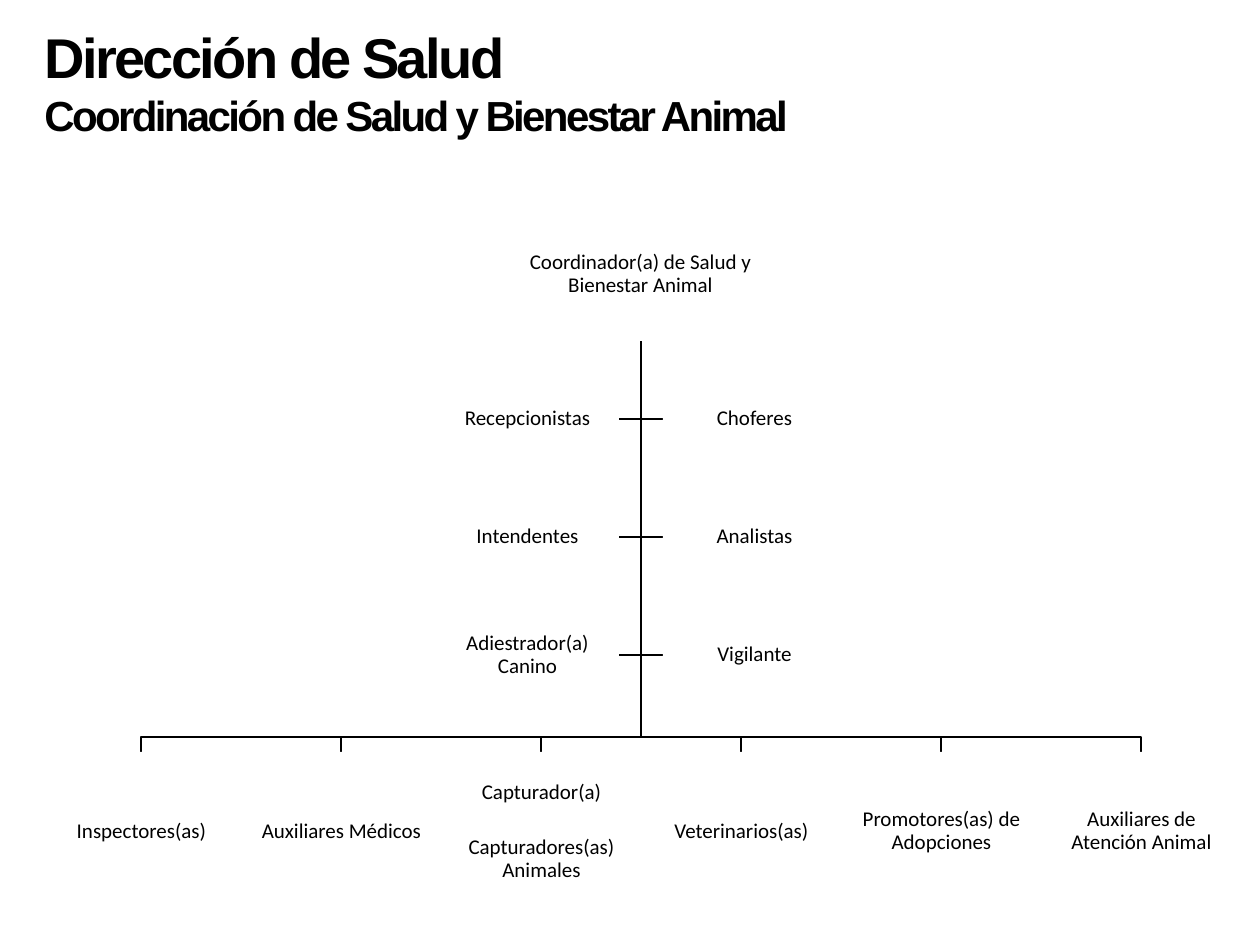
import pptx
import pptx.dml.color
import pptx.enum.shapes
import pptx.enum.text
import pptx.util
from dataclasses import dataclass

PX = 914400 / 126
TRUNK_X = 641
ROOT_BOTTOM = 341
BUS_Y = 737


@dataclass(frozen=True)
class Theme:
    ink: str = "000000"
    paper: str = "FFFFFF"
    title_font: str = "Arial"
    body_font: str = "Calibri"
    title_size: int = 32
    subtitle_size: int = 24
    body_size: int = 12
    line_width: int = 1


THEME = Theme()

STAFF_ROWS = [
    ("Recepcionistas", "Choferes"),
    ("Intendentes", "Analistas"),
    ("Adiestrador(a) Canino", "Vigilante"),
]
TEAMS = [
    ["Inspectores(as)"],
    ["Auxiliares Médicos"],
    ["Capturador(a)", "Capturadores(as) Animales"],
    ["Veterinarios(as)"],
    ["Promotores(as) de Adopciones"],
    ["Auxiliares de Atención Animal"],
]


def emu(*lengths):
    return [round(v * PX) for v in lengths]


def rgb(value):
    return pptx.dml.color.RGBColor.from_string(value)


def apply(target, formats):
    for name, value in formats.items():
        setattr(target, name, value)


def add_run(p, text, font, size, bold=False):
    r = p.add_run()
    r.text = text
    apply(r.font, {"name": font, "size": pptx.util.Pt(size), "bold": bold})
    r.font.color.rgb = rgb(THEME.ink)
    return r


def add_title(s, lines):
    sp = s.shapes.add_textbox(*emu(32, 16, 955, 131))
    tf = sp.text_frame
    apply(tf, {
        "word_wrap": True,
        "auto_size": pptx.enum.text.MSO_AUTO_SIZE.SHAPE_TO_FIT_TEXT,
    })
    for i, (text, size) in enumerate(lines):
        p = tf.paragraphs[0] if i == 0 else tf.add_paragraph()
        r = add_run(p, text, THEME.title_font, size, True)
        r._r.get_or_add_rPr().set("spc", "-150")


def add_role(group, box, lines):
    sp = group.shapes.add_shape(
        pptx.enum.shapes.MSO_SHAPE.RECTANGLE, *emu(*box))
    sp.shadow.inherit = False
    sp.fill.solid()
    sp.fill.fore_color.rgb = rgb(THEME.paper)
    sp.line.fill.background()
    tf = sp.text_frame
    margin = emu(1)[0]
    apply(tf, {
        "word_wrap": True,
        "vertical_anchor": pptx.enum.text.MSO_ANCHOR.MIDDLE,
        "margin_left": margin,
        "margin_right": margin,
        "margin_top": margin,
        "margin_bottom": margin,
    })
    for i, text in enumerate(lines):
        p = tf.paragraphs[0] if i == 0 else tf.add_paragraph()
        apply(p, {
            "alignment": pptx.enum.text.PP_ALIGN.CENTER,
            "line_spacing": 0.9,
            "space_after": pptx.util.Pt(19 if i < len(lines) - 1 else 0),
        })
        add_run(p, text, THEME.body_font, THEME.body_size)


def add_branch(group, *points):
    builder = group.shapes.build_freeform(TRUNK_X, ROOT_BOTTOM, scale=PX)
    builder.add_line_segments(points, close=False)
    sp = builder.convert_to_shape()
    sp.shadow.inherit = False
    sp.fill.background()
    sp.line.color.rgb = rgb(THEME.ink)
    sp.line.width = pptx.util.Pt(THEME.line_width)


def add_chart_of_roles(s):
    group = s.shapes.add_group_shape()
    tick, staff_w, staff_h = 22, 183, 94
    team_w, team_h, team_top = 169, 159, 752
    staff_mids = [419 + 118 * i for i in range(len(STAFF_ROWS))]
    team_mids = [TRUNK_X + 200 * i - 100 * (len(TEAMS) - 1)
                 for i in range(len(TEAMS))]

    for y in staff_mids:
        for x in (TRUNK_X - tick, TRUNK_X + tick):
            add_branch(group, (TRUNK_X, y), (x, y))
    for x in team_mids:
        add_branch(group, (TRUNK_X, BUS_Y), (x, BUS_Y), (x, team_top))

    add_role(group, (504, 207, 273, ROOT_BOTTOM - 207),
             ["Coordinador(a) de Salud y Bienestar Animal"])
    for x, lines in zip(team_mids, TEAMS):
        add_role(group, (x - team_w // 2, team_top, team_w, team_h), lines)
    for y, (left, right) in zip(staff_mids, STAFF_ROWS):
        top = y - staff_h // 2
        add_role(group, (TRUNK_X - tick - staff_w, top, staff_w, staff_h), [left])
        add_role(group, (TRUNK_X + tick, top, staff_w, staff_h), [right])


def main():
    prs = pptx.Presentation()
    apply(prs, dict(zip(("slide_width", "slide_height"), emu(1260, 945))))
    s = prs.slides.add_slide(prs.slide_layouts[6])
    add_chart_of_roles(s)
    add_title(s, [
        ("Dirección de Salud", THEME.title_size),
        ("Coordinación de Salud y Bienestar Animal", THEME.subtitle_size),
    ])
    prs.save("out.pptx")


if __name__ == "__main__":
    main()
